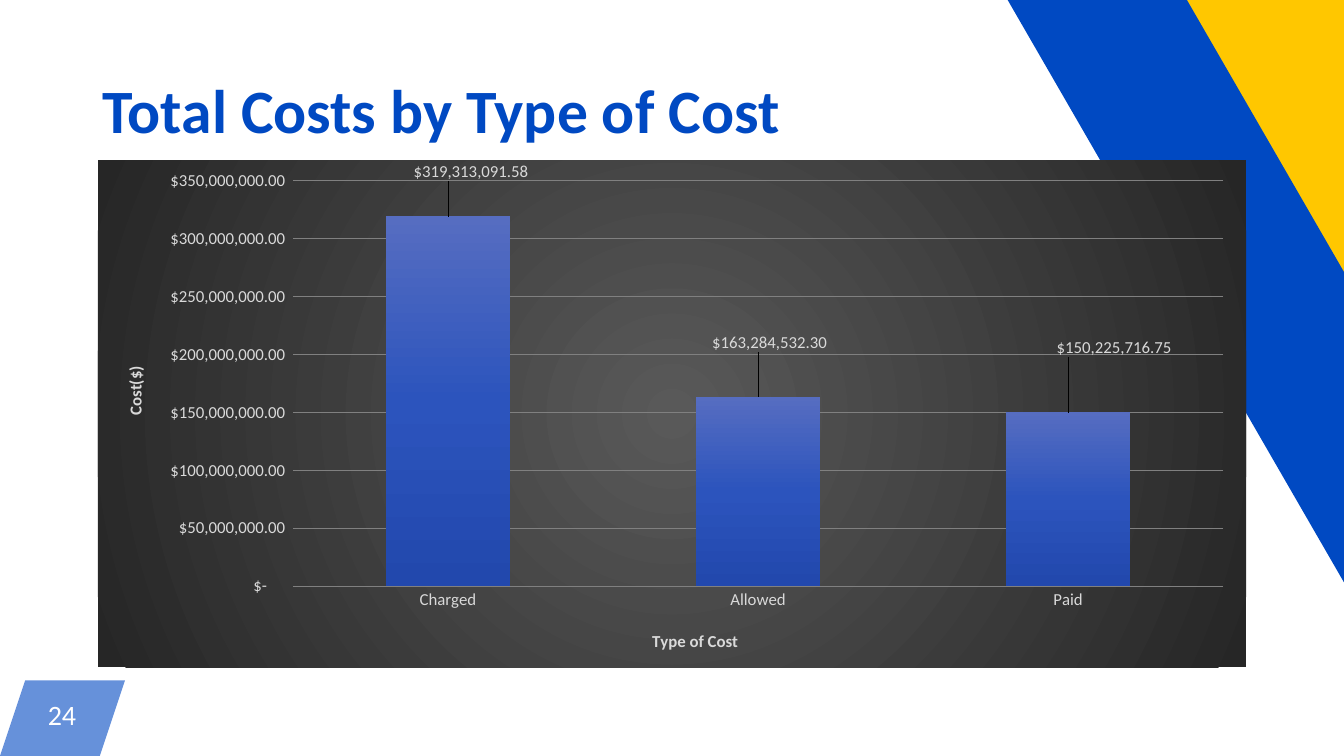
from dataclasses import dataclass

from lxml import etree
from pptx import Presentation, oxml
from pptx import util as u
from pptx.chart.data import CategoryChartData
from pptx.dml.color import RGBColor
from pptx.enum import chart as kinds
from pptx.enum import shapes, text
from pptx.oxml import ns

FONT = "Calibri"
COLORS = {"blue": "0049C2", "gold": "FFC700", "white": "FFFFFF",
          "label": "D9D9D9", "grid": "808080"}
BACK = [(0, "595959"), (100, "262626")]
BARS = [(0, "566DC1"), (50, "2C54BD"), (100, "2248AD")]
MONEY = r'_("$"* #,##0.00_);_("$"* \(#,##0.00\);_("$"* "-"??_);_(@_)'


@dataclass
class Band:
    left: float
    top: float
    width: float
    height: float
    turn: float
    color: str


@dataclass
class Cost:
    name: str
    value: float
    dx: float  # label shift, as a share of the chart size
    dy: float


BANDS = [Band(12.78, -3.31, 1.97, 9.81, 330.2, "gold"),
         Band(11.82, -1.95, 1.54, 9.81, 330, "blue")]
COSTS = [Cost("Charged", 319313091.58, 0.02, -0.06),
         Cost("Allowed", 163284532.30, 0.01, -0.08),
         Cost("Paid", 150225716.75, 0.04, -0.1)]


def tint(name: str) -> RGBColor:
    return RGBColor.from_string(COLORS[name])


def style(font, size: float, color: str, bold: bool = False) -> None:
    font.name, font.size, font.bold = FONT, u.Pt(size), bold
    font.color.rgb = tint(color)


def paint(shape, color: str) -> None:
    """Give a shape a plain fill, with no line and no shadow."""
    shape.shadow.inherit = False
    shape.fill.solid()
    shape.fill.fore_color.rgb = tint(color)
    shape.line.fill.background()


def write(slide, box: tuple, words: str, size: float, color: str, bold: bool = False):
    """Add a one-line text box and return its frame."""
    frame = slide.shapes.add_textbox(*map(u.Inches, box)).text_frame
    frame.word_wrap = True
    frame.vertical_anchor = text.MSO_ANCHOR.MIDDLE
    line = frame.paragraphs[0]
    line.text = words
    style(line.font, size, color, bold)
    return frame


def grade(stops: list, path: str):
    """Return a gradient fill element."""
    marks = "".join(f'<a:gs pos="{pos * 1000}"><a:srgbClr val="{color}"/></a:gs>'
                    for pos, color in stops)
    return oxml.parse_xml(f'<a:gradFill {ns.nsdecls("a")} rotWithShape="1">'
                          f'<a:gsLst>{marks}</a:gsLst>{path}</a:gradFill>')


def place(part, index: int, inner: bool = False, **spots: float) -> None:
    """Set the manual layout of a chart part."""
    for old in part.findall(ns.qn("c:layout")):
        part.remove(old)
    tags = '<c:layoutTarget val="inner"/>' if inner else ""
    if "w" in spots or not inner and part.tag == ns.qn("c:title"):
        tags += '<c:xMode val="edge"/><c:yMode val="edge"/>'
    tags += "".join(f'<c:{key} val="{val}"/>' for key, val in spots.items())
    part.insert(index, oxml.parse_xml(
        f'<c:layout {ns.nsdecls("c")}><c:manualLayout>{tags}</c:manualLayout></c:layout>'))


def trim(axis, title: str, x: float, y: float) -> None:
    """Style an axis and place its title."""
    axis.major_tick_mark = axis.minor_tick_mark = kinds.XL_TICK_MARK.NONE
    axis.format.line.fill.background()
    style(axis.tick_labels.font, 12, "label")
    line = axis.axis_title.text_frame.paragraphs[0]
    line.text = title
    style(line.font, 12, "label", True)
    place(axis.axis_title._element, 1, x=x, y=y)


def tag(series, index: int, cost: Cost) -> None:
    """Label one bar with its value."""
    label = series.points[index].data_label
    label.position = kinds.XL_LABEL_POSITION.OUTSIDE_END
    style(label.font, 12, "label")
    node = series._element.findall(".//" + ns.qn("c:dLbl"))[index]
    place(node, 1, x=cost.dx, y=cost.dy)
    form = etree.Element(ns.qn("c:numFmt"), formatCode=MONEY, sourceLinked="0")
    node.insert(2, form)


def plot(slide) -> None:
    data = CategoryChartData(number_format=MONEY)
    data.categories = [cost.name for cost in COSTS]
    data.add_series("Series 1", [cost.value for cost in COSTS])
    box = map(u.Inches, (0.97, 1.59, 11.39, 5.03))
    chart = slide.shapes.add_chart(
        kinds.XL_CHART_TYPE.COLUMN_CLUSTERED, *box, data).chart
    chart.has_legend = chart.has_title = False
    style(chart.font, 12, "label")
    body = chart._chartSpace.find(ns.qn("c:chart"))
    back = oxml.parse_xml(f'<c:spPr {ns.nsdecls("c", "a")}><a:ln><a:noFill/></a:ln></c:spPr>')
    back.insert(0, grade(BACK, '<a:path path="circle"><a:fillToRect l="50000" t="50000" '
                               'r="50000" b="50000"/></a:path>'))
    body.addnext(back)
    place(body.find(ns.qn("c:plotArea")), 0, True, x=0.17, y=0.04, w=0.81, h=0.8)

    trim(chart.category_axis, "Type of Cost", 0.48, 0.92)
    axis = chart.value_axis
    trim(axis, "Cost($)", 0.02, 0.4)
    axis.minimum_scale, axis.maximum_scale, axis.major_unit = 0, 350e6, 50e6
    axis.tick_labels.number_format = MONEY
    axis.tick_labels.number_format_is_linked = False
    grid = axis.major_gridlines.format.line
    grid.color.rgb, grid.width = tint("grid"), u.Pt(0.75)

    bars = chart.plots[0]
    bars.gap_width, bars.vary_by_categories = 150, False
    series = bars.series[0]
    series._element.get_or_add_spPr().insert(
        0, grade(BARS, '<a:lin ang="5400000" scaled="0"/>'))
    for index, cost in enumerate(COSTS):
        tag(series, index, cost)


def number(slide) -> None:
    """Add the slanted badge with the slide number."""
    pen = slide.shapes.build_freeform(u.Inches(0.25), u.Inches(6.75))
    pen.add_line_segments([(u.Inches(x), u.Inches(y))
                           for x, y in ((1.24, 6.75), (0.99, 7.5), (0, 7.5))])
    badge = pen.convert_to_shape()
    paint(badge, "blue")
    hue = badge._element.spPr.find(".//" + ns.qn("a:srgbClr"))
    etree.SubElement(hue, ns.qn("a:alpha"), val="60000")
    frame = write(slide, (0.25, 6.75, 0.73, 0.75), "24", 20, "white")
    frame.margin_left = frame.margin_right = u.Inches(0.04)
    frame.margin_top = frame.margin_bottom = u.Inches(0.04)
    line = frame.paragraphs[0]
    line.alignment, line.line_spacing = text.PP_ALIGN.CENTER, u.Pt(17.7)


def main() -> None:
    deck = Presentation()
    deck.slide_width, deck.slide_height = u.Inches(13.33), u.Inches(7.5)
    slide = deck.slides.add_slide(deck.slide_layouts[6])
    number(slide)
    for band in BANDS:
        box = map(u.Inches, (band.left, band.top, band.width, band.height))
        strip = slide.shapes.add_shape(shapes.MSO_SHAPE.RECTANGLE, *box)
        strip.rotation = band.turn
        paint(strip, band.color)
    title = write(slide, (0.92, 0.4, 11.5, 1.45), "Total Costs by Type of Cost",
                  44, "blue", True)
    title.paragraphs[0].line_spacing = 0.9
    plot(slide)
    deck.save("out.pptx")


if __name__ == "__main__":
    main()
